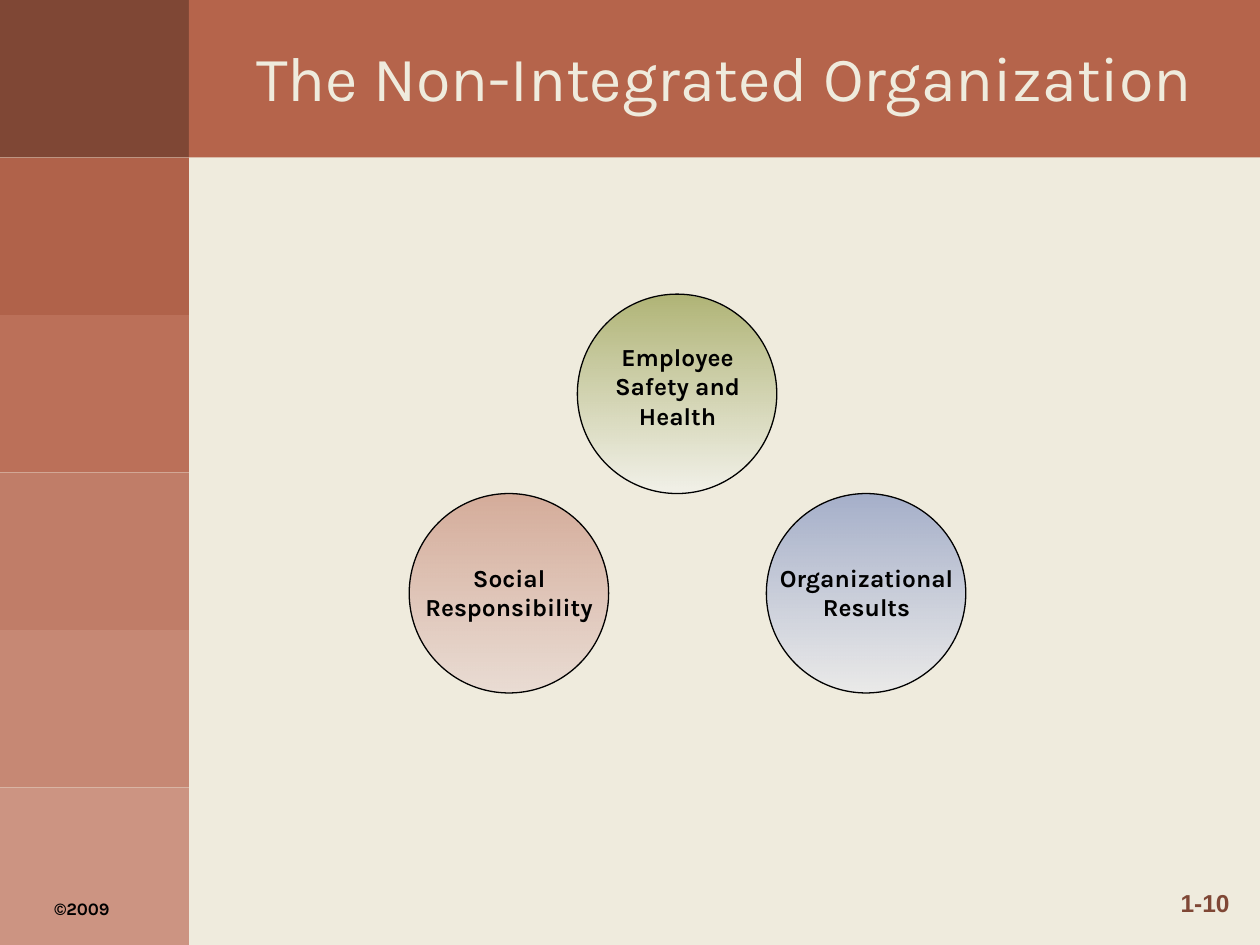
from pptx import Presentation
from pptx import util as u
from pptx.dml.color import RGBColor
from pptx.enum import shapes, text
from pptx.oxml.ns import qn
from lxml import etree

COLORS = {
    "cream": "EFEBDD", "brown": "7F4735", "banner": "B5644B", "black": "000000",
    "step1": "B0624A", "step2": "BB7059", "step3": "C07D68", "step4": "C68874", "step5": "CC9482",
    "green": "8C953B", "green_pale": "F4F5F1",
    "blue": "7B8DBF", "blue_pale": "E7E9F1",
    "rose": "C68874", "rose_pale": "E6D2CD",
}


def rgb(name):
    return RGBColor.from_string(COLORS[name])


def write(frame, words, size, color, font="Karla", bold=True, align=text.PP_ALIGN.CENTER, wrap=True):
    frame.text = words
    frame.word_wrap = wrap
    frame.vertical_anchor = text.MSO_ANCHOR.TOP
    line = frame.paragraphs[0]
    line.alignment = align
    for run in line.runs:
        run.font.name = font
        run.font.size = u.Pt(size)
        run.font.bold = bold
        run.font.color.rgb = rgb(color)


prs = Presentation()
prs.slide_width = u.Cm(25.4)
prs.slide_height = u.Cm(19.05)
slide = prs.slides.add_slide(prs.slide_layouts[5])
slide.background.fill.solid()
slide.background.fill.fore_color.rgb = rgb("cream")

sidebar = u.Cm(3.81)
step = prs.slide_height // 6
bands = [(0, 0, sidebar, "brown"), (sidebar, 0, prs.slide_width - sidebar, "banner")]
bands += [(0, row * step, sidebar, f"step{row}") for row in range(1, 6)]
for left, top, width, color in bands:
    band = slide.shapes.add_shape(shapes.MSO_SHAPE.RECTANGLE, left, top, width, step)
    band.shadow.inherit = False
    band.fill.solid()
    band.fill.fore_color.rgb = rgb(color)
    band.line.fill.background()

title = slide.shapes.title
band._element.addnext(title._element)
title.left, title.top = sidebar, u.Cm(0.64)
title.width, title.height = prs.slide_width - sidebar, u.Cm(1.78)
write(title.text_frame, "The Non-Integrated Organization", 36, "cream", bold=False)
title.text_frame.auto_size = text.MSO_AUTO_SIZE.NONE

copyright_note = slide.shapes.add_textbox(u.Cm(0.84), u.Cm(17.98), u.Cm(1.9), u.Cm(0.84))
write(copyright_note.text_frame, "©2009", 10, "black", align=text.PP_ALIGN.LEFT)

diameter = u.Cm(4.02)
goals = [
    ("Employee Safety and Health", "green", 11.64, 5.93, 12.07, 6.77, 3.18, 2.03),
    ("Organizational Results", "blue", 15.45, 9.95, 15.03, 11.22, 4.88, 1.45),
    ("Social Responsibility", "rose", 8.25, 9.95, 8.04, 11.22, 4.45, 1.45),
]
for words, color, left, top, label_left, label_top, label_width, label_height in goals:
    circle = slide.shapes.add_shape(shapes.MSO_SHAPE.OVAL, u.Cm(left), u.Cm(top), diameter, diameter)
    circle.shadow.inherit = False
    circle.line.color.rgb = rgb("black")
    circle.line.width = u.Pt(0.75)
    circle.fill.gradient()
    circle.fill.gradient_angle = 270
    for stop, shade in zip(circle.fill.gradient_stops, (color, color + "_pale")):
        stop.color.rgb = rgb(shade)
    for tint, opacity in zip(circle._element.spPr.find(qn("a:gradFill")).iter(qn("a:srgbClr")), (63, 60)):
        etree.SubElement(tint, qn("a:alpha")).set("val", str(opacity * 1000))
    label = slide.shapes.add_textbox(
        u.Cm(label_left), u.Cm(label_top), u.Cm(label_width), u.Cm(label_height))
    write(label.text_frame, words, 14, "black")

page = slide.shapes.add_textbox(u.Cm(23.55), u.Cm(17.78), u.Cm(1.5), u.Cm(0.84))
write(page.text_frame, "1-10", 14, "brown", font="Arial", align=text.PP_ALIGN.LEFT, wrap=False)

prs.save("out.pptx")
